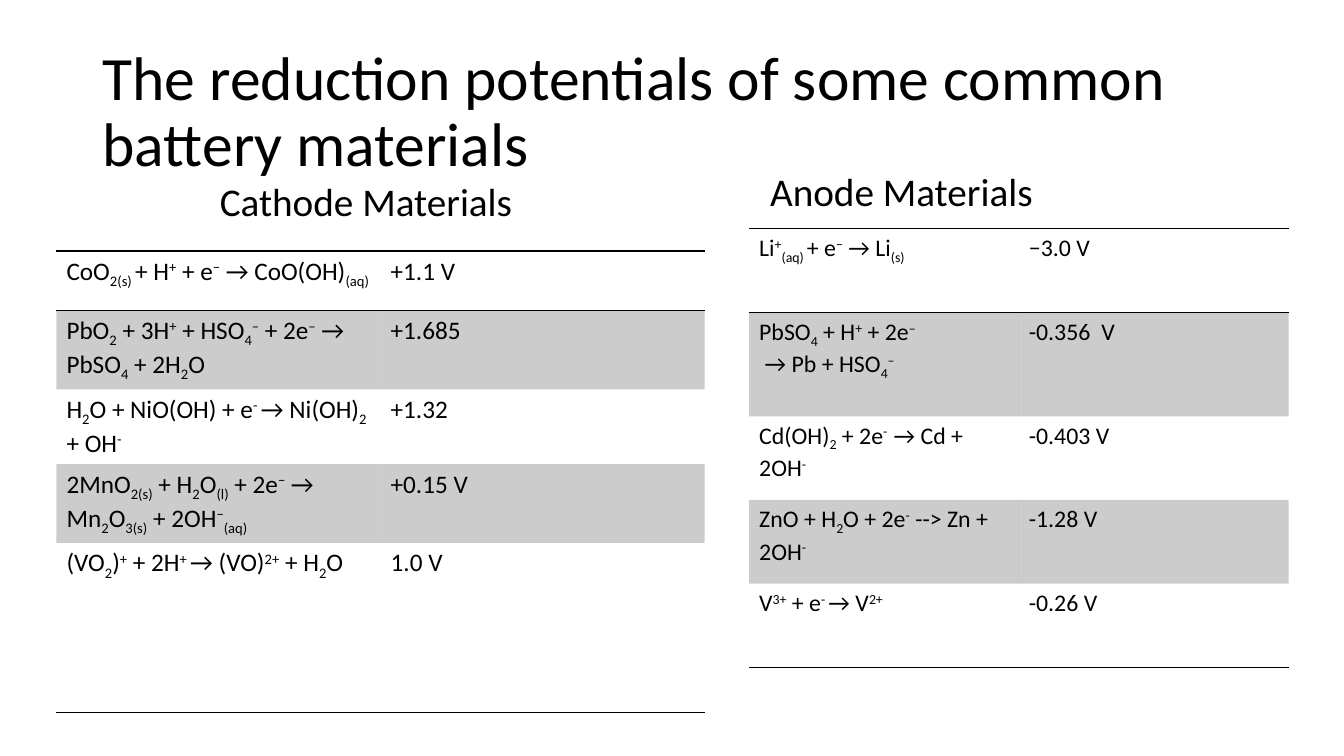
from lxml import etree
from pptx import Presentation
from pptx.dml.color import RGBColor
from pptx.enum.text import MSO_ANCHOR as Anchor, PP_ALIGN as Align
from pptx.oxml.ns import qn
from pptx.util import Inches, Pt

# Content: "|" separates runs, "_" opens a subscript and "^" a superscript
FONT, INK = "Calibri", "000000"
HEADINGS = [
    dict(text="The reduction potentials of some common battery materials",
         at=(0.92, 0.4, 11.5, 1.45), size=44, anchor=Anchor.MIDDLE,
         format=dict(line_spacing=0.9)),
    dict(text="Cathode Materials", at=(1.36, 1.76, 4.54, 4.76), size=28, anchor=Anchor.TOP,
         format=dict(line_spacing=0.9, alignment=Align.CENTER, space_before=Pt(10))),
    dict(text="Anode Materials", at=(6.67, 1.66, 4.54, 4.76), size=28, anchor=Anchor.TOP,
         format=dict(line_spacing=0.9, alignment=Align.CENTER, space_before=Pt(10))),
]
ANODE = dict(
    left=7.43, top=2.27, width=5.35, heights=[0.83, 1.03, 0.83, 0.83, 0.83], size=17,
    rows=[
        ("Li|^+|_(aq) |+ e|^−| → Li|_(s)", "−3.0 V"),
        ("PbSO|_4| + H|^+| + 2e|^–\n → Pb + HSO|_4|^–", "-0.356  V"),
        ("Cd(OH)|_2| + 2e|^-  |→ Cd + 2OH|^-", "-0.403 V"),
        ("ZnO + H|_2|O + 2e|^-| --> Zn + 2OH|^-", "-1.28 V"),
        ("V|^3+| + e|^- |→ V|^2+", "-0.26 V"),
    ])
CATHODE = dict(
    left=0.56, top=2.49, width=6.43, heights=[0.59, 0.59, 0.59, 0.59, 1.68], size=18,
    rows=[
        ("CoO|_2(s) |+ H|^+| + e|^−| → CoO(OH)|_(aq)", "+1.1 V"),
        ("PbO|_2| + 3H|^+| + HSO|_4|^–| + 2e|^–| → PbSO|_4| + 2H|_2|O", "+1.685"),
        ("H|_2|O + NiO(OH) + e|^- |→ Ni(OH)|_2| + OH|^-", "+1.32"),
        ("2MnO|_2(s)| + H|_2|O|_(l)| + 2e|^−| → Mn|_2|O|_3(s)| + 2OH|^−|_(aq)", "+0.15 V"),
        ("(VO|_2|)|^+| + 2H|^+ |→ (VO)|^2+| + H|_2|O", "1.0 V"),
    ])
BASELINES = {"_": "-25000", "^": "30000"}
NO_STYLE = "{2D5ABB26-0587-4C30-8999-92F81FD0307C}"


def color(value):
    return RGBColor.from_string(value)


def write(frame, text, size, **paragraph_format):
    for index, line in enumerate(text.split("\n")):
        paragraph = frame.add_paragraph() if index else frame.paragraphs[0]
        for name, value in paragraph_format.items():
            setattr(paragraph, name, value)
        for piece in line.split("|"):
            run = paragraph.add_run()
            shift = BASELINES.get(piece[0])
            run.text = piece[1:] if shift else piece
            for name, value in dict(name=FONT, size=Pt(size)).items():
                setattr(run.font, name, value)
            run.font.color.rgb = color(INK)
            if shift:
                run.font._element.set("baseline", shift)


def add_rule(cell, side):
    line = etree.SubElement(cell._tc.get_or_add_tcPr(), qn(f"a:{side}"), w=str(Pt(1)))
    fill = etree.SubElement(line, qn("a:solidFill"))
    etree.SubElement(fill, qn("a:srgbClr"), val=INK)


def shade(cell):
    cell.fill.solid()
    cell.fill.fore_color.rgb = color(INK)
    tint = cell._tc.tcPr.find(f"{qn('a:solidFill')}/{qn('a:srgbClr')}")
    etree.SubElement(tint, qn("a:alpha"), val="20000")


def add_potentials(slide, left, top, width, heights, size, rows):
    box = [Inches(v) for v in (left, top, width, sum(heights))]
    table = slide.shapes.add_table(len(rows), 2, *box).table
    table._tbl.tblPr.find(qn("a:tableStyleId")).text = NO_STYLE
    for column in table.columns:
        column.width = Inches(width / 2)
    for r, (height, texts) in enumerate(zip(heights, rows)):
        table.rows[r].height = Inches(height)
        for c, text in enumerate(texts):
            cell = table.cell(r, c)
            write(cell.text_frame, text, size)
            # Rules around the first row and below the last
            if r == 0:
                add_rule(cell, "lnT")
            if r in (0, len(rows) - 1):
                add_rule(cell, "lnB")
            # Every second row is shaded
            if r % 2:
                shade(cell)
            else:
                cell.fill.background()


def main():
    deck = Presentation()
    deck.slide_width, deck.slide_height = Inches(13.33), Inches(7.5)
    slide = deck.slides.add_slide(deck.slide_layouts[6])

    # Title and column headings
    for heading in HEADINGS:
        frame = slide.shapes.add_textbox(*map(Inches, heading["at"])).text_frame
        frame.word_wrap = True
        frame.vertical_anchor = heading["anchor"]
        write(frame, heading["text"], heading["size"], **heading["format"])

    # Tables
    for potentials in (ANODE, CATHODE):
        add_potentials(slide, **potentials)
    deck.save("out.pptx")


if __name__ == "__main__":
    main()
